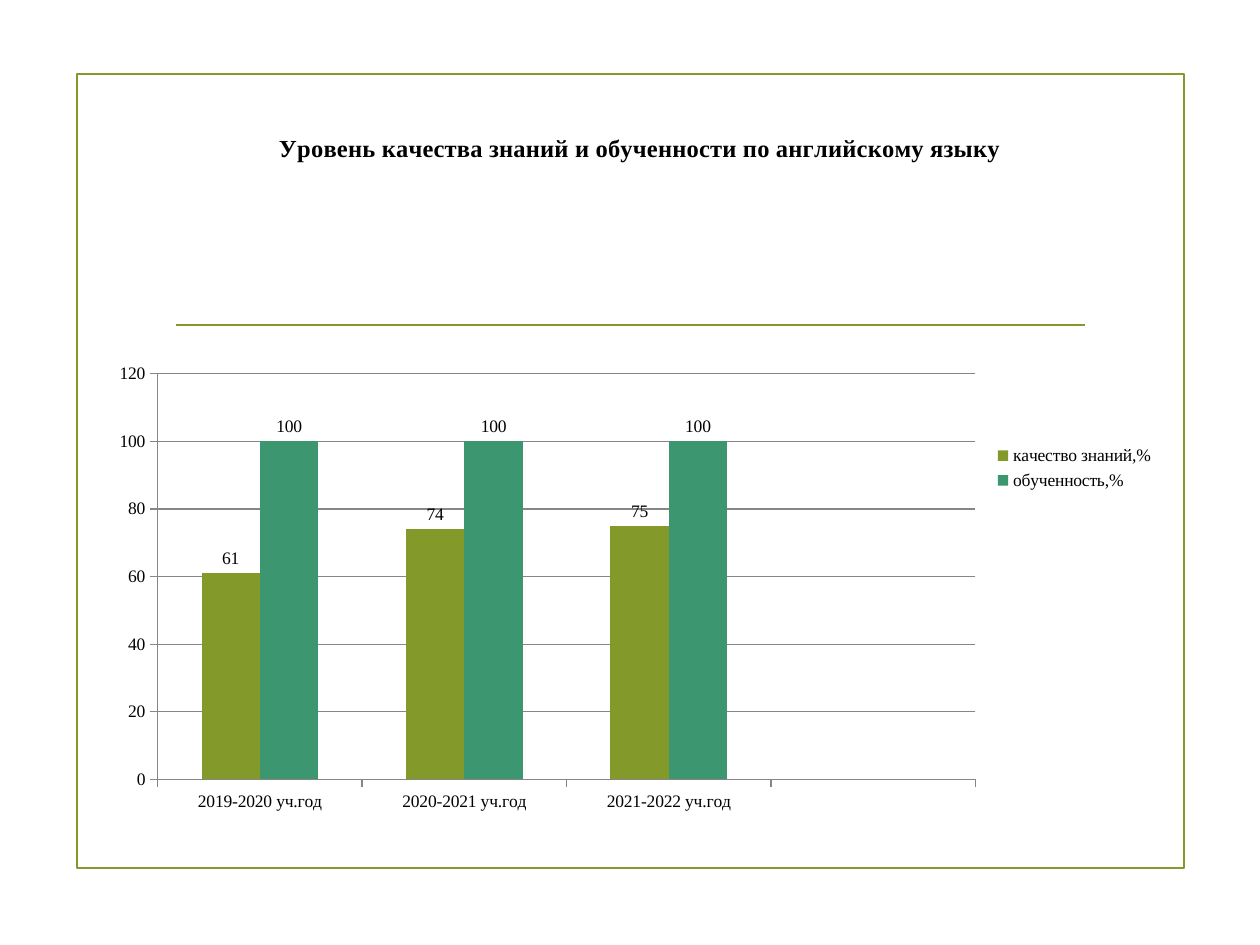
import pptx
import pptx.chart.data
import pptx.enum.chart
import pptx.enum.shapes
import pptx.oxml
import pptx.oxml.ns
import pptx.util
from pptx.dml.color import RGBColor
from pptx.util import Inches

FONT = "Times New Roman"
COLORS = {"olive": "83992A", "green": "3C9770", "axis": "868686", "text": "000000"}
YEARS = ["2019-2020 уч.год", "2020-2021 уч.год", "2021-2022 уч.год", ""]
SERIES = [
    ("качество знаний,%", (61, 74, 75, None), "olive"),
    ("обученность,%", (100, 100, 100, None), "green"),
]


def rgb(name):
    return RGBColor.from_string(COLORS[name])


def style_line(line, color, width):
    line.color.rgb = rgb(color)
    line.width = pptx.util.Pt(width)


def style_font(font, size, bold=False):
    font.name = FONT
    font.size = pptx.util.Pt(size)
    font.bold = bold
    font.color.rgb = rgb("text")


def set_layout(parent, index, inner=False, **fractions):
    """Place a chart part by fractions of the chart's size."""
    qn = pptx.oxml.ns.qn
    for old in parent.findall(qn("c:layout")):
        parent.remove(old)
    target = '<c:layoutTarget val="inner"/>' if inner else ""
    modes = "".join(f'<c:{k}Mode val="edge"/>' for k in fractions if k in "xy")
    values = "".join(f'<c:{k} val="{v}"/>' for k, v in fractions.items())
    parent.insert(index, pptx.oxml.parse_xml(
        f'<c:layout {pptx.oxml.ns.nsdecls("c")}><c:manualLayout>'
        f"{target}{modes}{values}</c:manualLayout></c:layout>"))


def add_frame(s, x, y, w, h):
    # Border
    border = s.shapes.add_shape(pptx.enum.shapes.MSO_SHAPE.RECTANGLE, x, y, w, h)
    border.shadow.inherit = False
    border.fill.background()
    style_line(border.line, "olive", 1.25)

    # Rule under the heading
    inset, rule_y = Inches(0.79), y + Inches(1.99)
    rule = s.shapes.add_connector(pptx.enum.shapes.MSO_CONNECTOR.STRAIGHT,
                                  x + inset, rule_y, x + w - inset, rule_y)
    style_line(rule.line, "olive", 1.25)
    rule._element.spPr.append(
        pptx.oxml.parse_xml(f'<a:effectLst {pptx.oxml.ns.nsdecls("a")}/>'))


def add_results_chart(s, x, y, w, h):
    data = pptx.chart.data.CategoryChartData()
    data.categories = YEARS
    for name, values, _ in SERIES:
        data.add_series(name, values)
    chart = s.shapes.add_chart(
        pptx.enum.chart.XL_CHART_TYPE.COLUMN_CLUSTERED, x, y, w, h, data).chart
    style_font(chart.font, 10)

    # Title
    chart.has_title = True
    tf = chart.chart_title.text_frame
    tf.text = "Уровень качества знаний и обученности по английскому языку"
    style_font(tf.paragraphs[0].runs[0].font, 14, bold=True)
    set_layout(chart.chart_title._element, 1, x=0.16, y=0.03)

    # Legend
    chart.has_legend = True
    chart.legend.position = pptx.enum.chart.XL_LEGEND_POSITION.RIGHT
    chart.legend.include_in_layout = False

    # Columns
    plot = chart.plots[0]
    plot.gap_width = 150
    plot.overlap = 0
    plot.vary_by_categories = False
    for series, (_, _, color) in zip(plot.series, SERIES):
        series.format.fill.solid()
        series.format.fill.fore_color.rgb = rgb(color)
        labels = series.data_labels
        labels.show_value = True
        labels.position = pptx.enum.chart.XL_LABEL_POSITION.OUTSIDE_END
    set_layout(chart._chartSpace.chart.plotArea, 0, inner=True,
               x=0.05, y=0.37, w=0.77, h=0.56)

    # Axes
    for axis in (chart.category_axis, chart.value_axis):
        axis.major_tick_mark = pptx.enum.chart.XL_TICK_MARK.OUTSIDE
        axis.minor_tick_mark = pptx.enum.chart.XL_TICK_MARK.NONE
        style_line(axis.format.line, "axis", 0.75)
    values = chart.value_axis
    values.minimum_scale, values.maximum_scale, values.major_unit = 0, 120, 20
    values.has_major_gridlines = True
    style_line(values.major_gridlines.format.line, "axis", 0.75)


def main():
    prs = pptx.Presentation()
    prs.slide_width, prs.slide_height = Inches(10), Inches(7.5)
    s = prs.slides.add_slide(prs.slide_layouts[6])
    add_frame(s, Inches(0.61), Inches(0.59), Inches(8.79), Inches(6.3))
    add_results_chart(s, Inches(0.83), Inches(0.84), Inches(8.43), Inches(5.75))
    prs.save("out.pptx")


if __name__ == "__main__":
    main()
